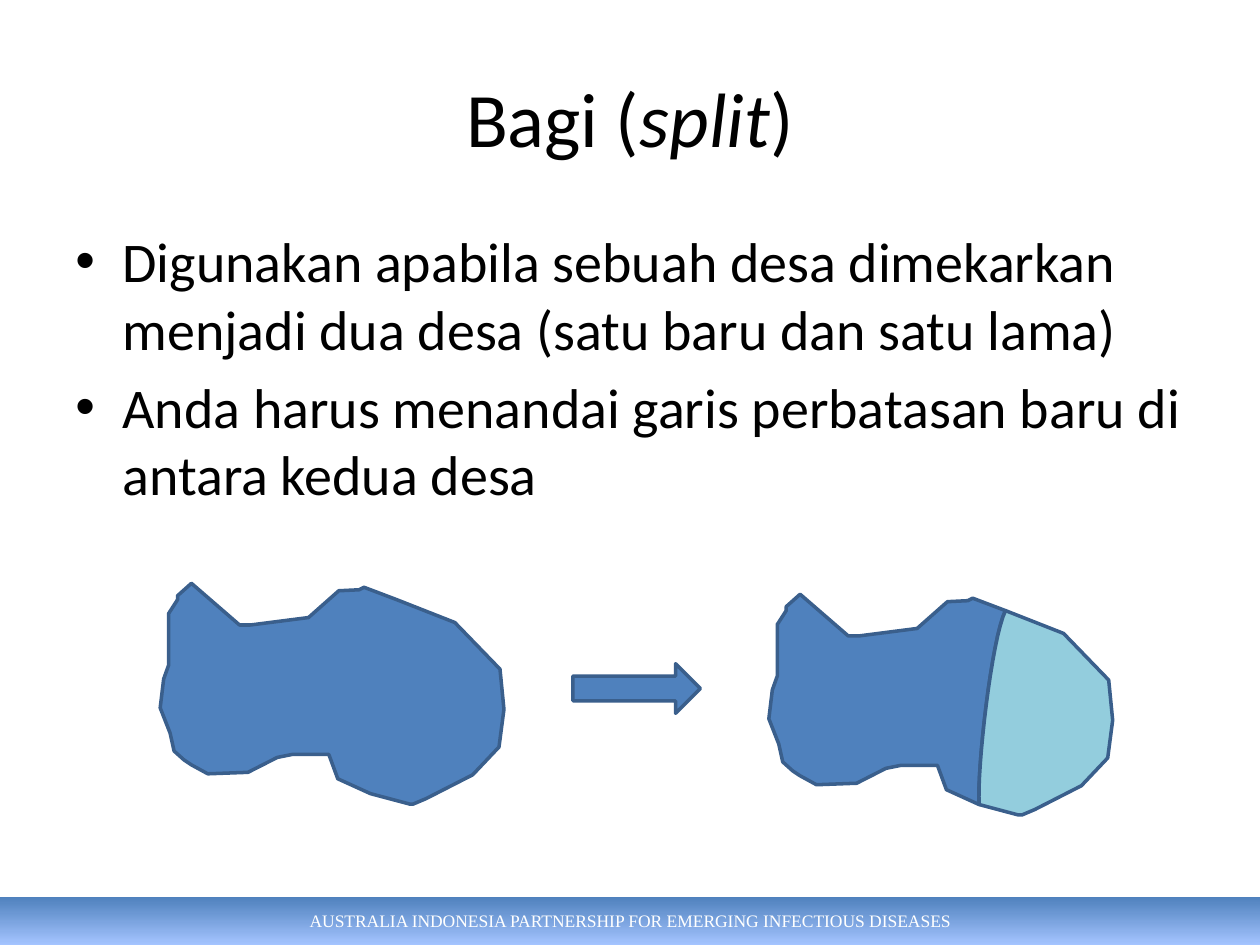
from dataclasses import dataclass

from lxml.etree import SubElement
from pptx import Presentation
from pptx.dml.color import RGBColor
from pptx.enum.shapes import MSO_SHAPE
from pptx.enum.text import MSO_ANCHOR, PP_ALIGN
from pptx.oxml.ns import qn
from pptx.util import Cm, Pt


@dataclass(frozen=True)
class Theme:
    black: RGBColor = RGBColor.from_string("000000")
    white: RGBColor = RGBColor.from_string("FFFFFF")
    blue: RGBColor = RGBColor.from_string("4F81BD")
    light_blue: RGBColor = RGBColor.from_string("A4C4FF")
    teal: RGBColor = RGBColor.from_string("93CDDD")
    outline: RGBColor = RGBColor.from_string("3A5F8C")
    title_size: Pt = Pt(44)
    body_size: Pt = Pt(32)
    footer_size: Pt = Pt(10)
    outline_width: Pt = Pt(2)
    font: str = "Calibri"
    footer_font: str = "Times New Roman"


THEME = Theme()
TITLE_FONT = {"name": THEME.font, "size": THEME.title_size}
BODY_FONT = {"name": THEME.font, "size": THEME.body_size}
FOOTER_FONT = {"name": THEME.footer_font, "size": THEME.footer_size}

BULLETS = [
    "Digunakan apabila sebuah desa dimekarkan menjadi dua desa (satu baru dan satu lama)",
    "Anda harus menandai garis perbatasan baru di antara kedua desa",
]

# Village outline in centimetres, clockwise from the lower end of the new border.
WEST_SIDE = [
    (7.47, 16), (6.81, 15.7), (6.63, 15.21), (5.89, 15.21), (5.59, 15.27),
    (5, 15.57), (4.19, 15.6), (3.86, 15.42), (3.71, 15.32), (3.51, 15.14),
    (3.43, 14.78), (3.23, 14.27), (3.3, 13.69), (3.4, 13.41), (3.4, 12.37),
    (3.58, 12.09), (3.58, 12.01), (3.86, 11.76), (4.83, 12.6), (5.05, 12.6),
    (6.22, 12.45), (6.83, 11.91), (7.24, 11.89), (7.34, 11.84), (8, 12.09),
]
EAST_SIDE = [
    (9.17, 12.55), (10.08, 13.49), (10.16, 14.3), (10.06, 15.06),
    (9.53, 15.62), (8.59, 16.1), (8.33, 16.21), (8.26, 16.21),
]
BORDER_CONTROLS = [WEST_SIDE[0], (7.42, 15.3), (7.72, 12.65), WEST_SIDE[-1]]
SPLIT_SHIFT = (12.27, 0.22)


def bezier_points(controls, steps=16):
    """Sample a cubic curve evenly from its first to its last control point."""
    points = []
    for step in range(steps + 1):
        t = step / steps
        weights = [(1 - t) ** 3, 3 * t * (1 - t) ** 2, 3 * t**2 * (1 - t), t**3]
        points.append(tuple(
            sum(weight * control[axis] for weight, control in zip(weights, controls))
            for axis in (0, 1)
        ))
    return points


def add_span(para, text, values, color):
    span = para.add_run()
    span.text = text
    for name, value in values.items():
        setattr(span.font, name, value)
    span.font.color.rgb = color


def paint(shape, color):
    shape.shadow.inherit = False
    shape.fill.solid()
    shape.fill.fore_color.rgb = color
    shape.line.color.rgb = THEME.outline
    shape.line.width = THEME.outline_width


def add_area(slide, points, color, shift=(0, 0)):
    start, *others = [(Cm(x + shift[0]), Cm(y + shift[1])) for x, y in points]
    builder = slide.shapes.build_freeform(*start)
    builder.add_line_segments(others, close=True)
    paint(builder.convert_to_shape(), color)


def add_arrow(slide):
    arrow = slide.shapes.add_shape(
        MSO_SHAPE.RIGHT_ARROW, Cm(11.55), Cm(13.38), Cm(2.57), Cm(1)
    )
    paint(arrow, THEME.blue)


def fill_title(slide):
    title = slide.shapes.title
    place = {"left": Cm(1.27), "top": Cm(0.76), "width": Cm(22.86), "height": Cm(3.18)}
    for name, value in place.items():
        setattr(title, name, value)
    title.text_frame.vertical_anchor = MSO_ANCHOR.MIDDLE
    para = title.text_frame.paragraphs[0]
    para.alignment = PP_ALIGN.CENTER
    for text, italic in [("Bagi (", False), ("split", True), (")", False)]:
        add_span(para, text, {**TITLE_FONT, "italic": italic}, THEME.black)


def add_bullets(slide, texts):
    box = slide.shapes.add_textbox(Cm(1.27), Cm(4.45), Cm(22.86), Cm(12.57))
    frame = box.text_frame
    frame.word_wrap = True
    for index, text in enumerate(texts):
        para = frame.add_paragraph() if index else frame.paragraphs[0]
        properties = para._p.get_or_add_pPr()
        properties.set("marL", str(Cm(0.95)))
        properties.set("indent", str(-Cm(0.95)))
        SubElement(properties, qn("a:buFont"), typeface="Arial")
        SubElement(properties, qn("a:buChar"), char="•")
        if index:
            para.space_before = Pt(6.4)
        add_span(para, text, BODY_FONT, THEME.black)


def add_footer(slide, text):
    band = slide.shapes.add_shape(MSO_SHAPE.RECTANGLE, 0, Cm(18.08), Cm(25.4), Cm(0.97))
    band.shadow.inherit = False
    band.line.fill.background()
    band.fill.gradient()
    band.fill.gradient_angle = 270
    for stop, color in zip(band.fill.gradient_stops, (THEME.blue, THEME.light_blue)):
        stop.color.rgb = color
    band.text_frame.vertical_anchor = MSO_ANCHOR.MIDDLE
    para = band.text_frame.paragraphs[0]
    para.alignment = PP_ALIGN.CENTER
    add_span(para, text, FOOTER_FONT, THEME.white)


def main():
    deck = Presentation()
    deck.slide_width, deck.slide_height = Cm(25.4), Cm(19.05)
    slide = deck.slides.add_slide(deck.slide_layouts[5])

    add_footer(slide, "AUSTRALIA INDONESIA PARTNERSHIP FOR EMERGING INFECTIOUS DISEASES")
    fill_title(slide)
    add_bullets(slide, BULLETS)

    border = bezier_points(BORDER_CONTROLS)
    add_area(slide, WEST_SIDE + EAST_SIDE, THEME.blue)
    add_area(slide, WEST_SIDE + border[-2:0:-1], THEME.blue, SPLIT_SHIFT)
    add_area(slide, border + EAST_SIDE, THEME.teal, SPLIT_SHIFT)
    add_arrow(slide)

    deck.save("out.pptx")


if __name__ == "__main__":
    main()
